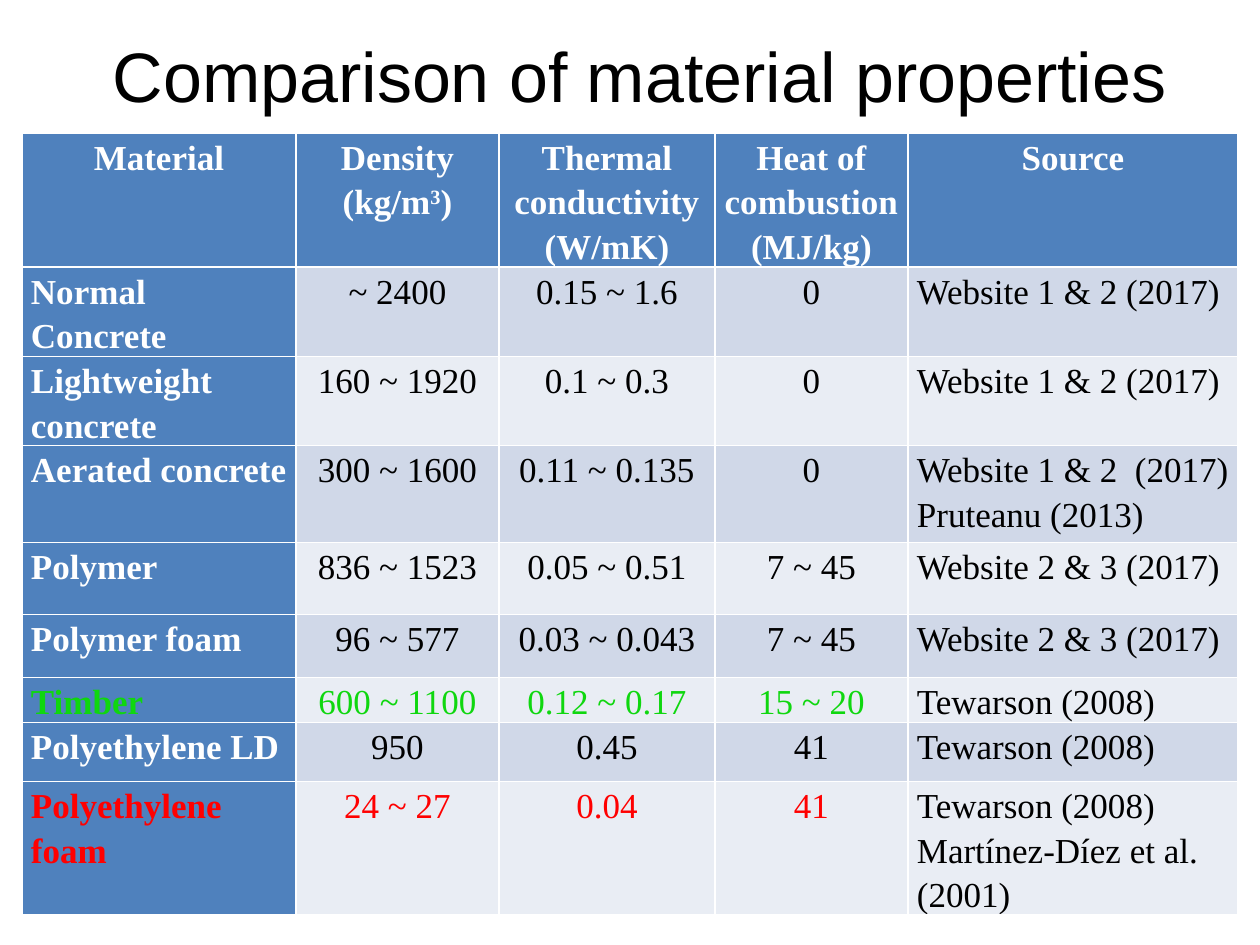
from lxml.etree import SubElement
from pptx import Presentation
from pptx.dml.color import RGBColor
from pptx.enum.text import MSO_ANCHOR as Anchor, MSO_AUTO_SIZE as Fit, PP_ALIGN as Align
from pptx.oxml.ns import qn
from pptx.util import Emu, Pt

PX = 914400 // 126
BLACK = RGBColor(0x00, 0x00, 0x00)
WHITE = RGBColor(0xFF, 0xFF, 0xFF)
BLUE = RGBColor(0x4F, 0x81, 0xBD)
BANDS = [RGBColor(0xD0, 0xD8, 0xE8), RGBColor(0xE9, 0xED, 0xF4)]
GREEN = RGBColor(0x0F, 0xD7, 0x0F)
RED = RGBColor(0xFF, 0x00, 0x00)

COLS = [274, 203, 216, 193, 330]
HEIGHTS = [88, 59, 59, 97, 72, 63, 29, 59, 88]
ROWS = [
    ["Material", "Density\n(kg/m^3^)", "Thermal conductivity\n(W/mK)",
     "Heat of combustion\n(MJ/kg)", "Source"],
    ["Normal Concrete", "~ 2400", "0.15 ~ 1.6", "0", "Website 1 & 2 (2017)"],
    ["Lightweight concrete", "160 ~ 1920", "0.1 ~ 0.3", "0", "Website 1 & 2 (2017)"],
    ["Aerated concrete", "300 ~ 1600", "0.11 ~ 0.135", "0",
     "Website 1 & 2  (2017)\nPruteanu (2013)"],
    ["Polymer", "836 ~ 1523", "0.05 ~ 0.51", "7 ~ 45", "Website 2 & 3 (2017)"],
    ["Polymer foam", "96 ~ 577", "0.03 ~ 0.043", "7 ~ 45", "Website 2 & 3 (2017)"],
    ["Timber", "600 ~ 1100", "0.12 ~ 0.17", "15 ~ 20", "Tewarson (2008)"],
    ["Polyethylene LD", "950", "0.45", "41", "Tewarson (2008)"],
    ["Polyethylene foam", "24 ~ 27", "0.04", "41",
     "Tewarson (2008)\nMartínez-Díez et al. (2001)"],
]
MARKS = {"Timber": GREEN, "Polyethylene foam": RED}


def px(num):
    """Turn px into EMU."""
    return Emu(num * PX)


class Deck:
    """Holds the style and the current slide."""

    head, body = "Arial", "Times New Roman"
    large, small = 40, 20

    def __init__(self, wide, high):
        """Start a deck with one title slide."""
        self.prs = Presentation()
        self.prs.slide_width, self.prs.slide_height = px(wide), px(high)
        self.slide = self.prs.slides.add_slide(self.prs.slide_layouts[5])

    def style(self, run, name, size, color, bold=False):
        """Format one run."""
        font = run.font
        font.name, font.size, font.bold = name, Pt(size), bold
        font.color.rgb = color

    def title(self, text, left, top, wide, high):
        """Fill the title, leaving an open line below it."""
        shape = self.slide.shapes.title
        shape.left, shape.top = px(left), px(top)
        shape.width, shape.height = px(wide), px(high)
        frame = shape.text_frame
        frame.text = text + "\v"
        frame.auto_size, frame.vertical_anchor = Fit.NONE, Anchor.MIDDLE
        para = frame.paragraphs[0]
        para.alignment = Align.CENTER
        for run in para.runs:
            self.style(run, self.head, self.large, BLACK)
        end = SubElement(para._p, qn("a:endParaRPr"))
        end.set("sz", str(self.large * 100))

    def cell(self, cell, text, fill, color, bold, align, gap):
        """Fill and format one cell; carets enclose a superscript."""
        cell.margin_left = cell.margin_right = px(9)
        cell.margin_top = cell.margin_bottom = 0
        cell.fill.solid()
        cell.fill.fore_color.rgb = fill
        frame = cell.text_frame
        frame.text = text.replace("^", "")
        for para, line in zip(frame.paragraphs, text.split("\n")):
            para.alignment, para.line_spacing = align, 1.15
            para.space_before, para.space_after = map(Pt, gap)
            parts = line.split("^")
            para.runs[0].text = parts[0]
            for part in parts[1:]:
                para.add_run().text = part
            for pos, run in enumerate(para.runs):
                self.style(run, self.body, self.small, color, bold)
                if pos % 2:
                    run._r.get_or_add_rPr().set("baseline", "30000")

    def table(self, rows, left, top, cols, heights, high):
        """Add the table with its header row, header column and bands."""
        frame = self.slide.shapes.add_table(
            len(rows), len(cols), px(left), px(top), px(sum(cols)), px(high))
        table = frame.table
        table.first_col = True
        for col, wide in zip(table.columns, cols):
            col.width = px(wide)
        for row, tall in zip(table.rows, heights):
            row.height = px(tall)
        frame.height = px(high)
        last = len(cols) - 1
        for i, row in enumerate(rows):
            mark = MARKS.get(row[0])
            for j, text in enumerate(row):
                top_row, side = i == 0, j == 0
                bold = top_row or side
                fill = BLUE if bold else BANDS[(i - 1) % 2]
                color = WHITE if bold else BLACK
                if mark and j < last:
                    color = mark
                center = top_row or 0 < j < last
                align = Align.CENTER if center else Align.LEFT
                gap = (0, 0) if top_row or j == last else (7.5, 9) if i == 1 else (6, 6)
                self.cell(table.cell(i, j), text, fill, color, bold, align, gap)


def main():
    """Build the slide."""
    deck = Deck(1260, 945)
    deck.title("Comparison of material properties", 63, 38, 1153, 157)
    deck.table(ROWS, 22, 133, COLS, HEIGHTS, 784)
    deck.prs.save("out.pptx")


if __name__ == "__main__":
    main()
